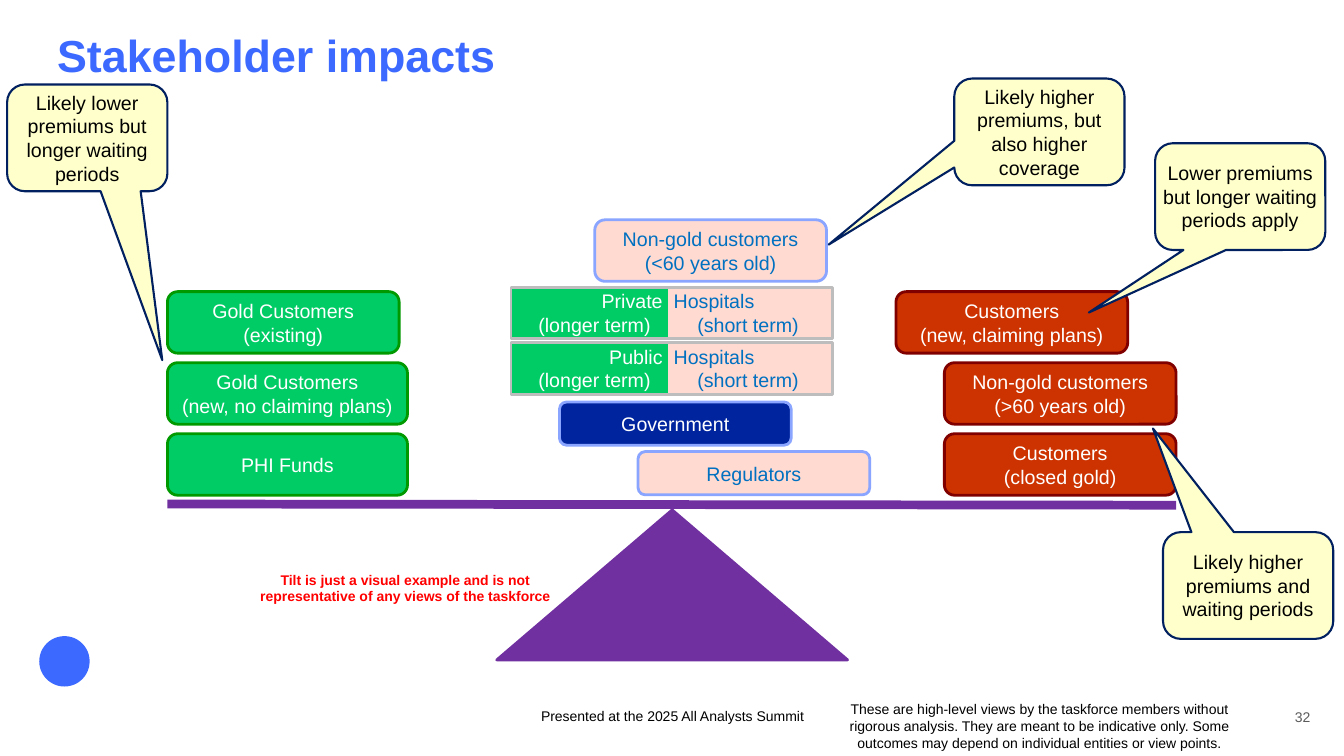
from lxml.etree import SubElement
from pptx import Presentation
from pptx.dml.color import RGBColor
from pptx.enum.shapes import MSO_CONNECTOR, MSO_SHAPE
from pptx.enum.text import MSO_ANCHOR, PP_ALIGN
from pptx.oxml.ns import qn
from pptx.util import Cm, Pt

LEFT, CENTER, RIGHT = PP_ALIGN.LEFT, PP_ALIGN.CENTER, PP_ALIGN.RIGHT
GREEN, RED, PINK, PURPLE = "00CC66", "CC3300", "FFDAD1", "7030A0"
WHITE, BLACK, BLUE, PALE_BLUE = "FFFFFF", "000000", "0070C0", "8AA5FF"
CARD_W, CARD_H, LOW_H = 5.84, 1.55, 1.09
CARD_INSETS = (0.25, 0.13, 0.25, 0.13)


def rgb(value):
    return RGBColor.from_string(value)


def write(sp, text, size=14, color=BLACK, bold=False, aligns=(CENTER,),
          anchor=MSO_ANCHOR.MIDDLE, insets=(0, 0, 0, 0)):
    tf = sp.text_frame
    tf.word_wrap = True
    tf.vertical_anchor = anchor
    tf.margin_left, tf.margin_top, tf.margin_right, tf.margin_bottom = map(Cm, insets)
    for i, line in enumerate(text.split("\n")):
        p = tf.paragraphs[0] if i == 0 else tf.add_paragraph()
        p.alignment = aligns[i % len(aligns)]
        r = p.add_run()
        r.text = line
        r.font.name = "Arial"
        r.font.size = Pt(size)
        r.font.bold = bold
        r.font.color.rgb = rgb(color)


class Board:
    def __init__(self, slide):
        self.slide = slide

    def label(self, box, text, **fmt):
        sp = self.slide.shapes.add_textbox(*map(Cm, box))
        write(sp, text, **fmt)

    def shape(self, kind, box, fill=None, line=None, width=2):
        sp = self.slide.shapes.add_shape(kind, *map(Cm, box))
        sp.shadow.inherit = False
        if fill:
            sp.fill.solid()
            sp.fill.fore_color.rgb = rgb(fill)
        else:
            sp.fill.background()
        if line:
            sp.line.color.rgb = rgb(line)
            sp.line.width = Pt(width)
        else:
            sp.line.fill.background()
        return sp

    def card(self, box, text, fill, line, color=WHITE):
        sp = self.shape(MSO_SHAPE.ROUNDED_RECTANGLE, box, fill, line)
        write(sp, text, color=color, insets=CARD_INSETS)

    def callout(self, box, tail, text):
        sp = self.shape(MSO_SHAPE.ROUNDED_RECTANGULAR_CALLOUT, box, "FFFFCC", "002060", 1.5)
        sp.adjustments[0], sp.adjustments[1] = tail
        write(sp, text, insets=(0.05,) * 4)

    def hospitals(self, top, sector):
        long_term = self.shape(MSO_SHAPE.RECTANGLE, (12.88, top, 3.96, 1.27), GREEN)
        write(long_term, f"{sector} \n(longer term)", color=WHITE,
              aligns=(RIGHT, CENTER), insets=(0.25, 0.13, 0, 0.13))
        short_term = self.shape(MSO_SHAPE.RECTANGLE, (16.84, top, 4.14, 1.27), PINK)
        write(short_term, " Hospitals\n (short term)", color=BLUE,
              aligns=(LEFT, CENTER), insets=(0, 0.13, 0.25, 0.13))
        self.shape(MSO_SHAPE.RECTANGLE, (12.88, top, 8.1, 1.3), line="BDBDBD")

    def beam(self, start, end, color, width):
        c = self.slide.shapes.add_connector(MSO_CONNECTOR.STRAIGHT, *map(Cm, start + end))
        c.line.color.rgb = rgb(color)
        c.line.width = Pt(width)
        SubElement(c.element.spPr, qn("a:effectLst"))


def main():
    prs = Presentation()
    prs.slide_width, prs.slide_height = Cm(33.87), Cm(19.05)
    s = Board(prs.slides.add_slide(prs.slide_layouts[6]))

    s.shape(MSO_SHAPE.OVAL, (0.99, 16.03, 1.27, 1.27), "3C69FF")
    s.label((1.19, 0.58, 32.44, 1.98), "Stakeholder impacts", size=32, color="3C69FF",
            bold=True, aligns=(LEFT,), anchor=MSO_ANCHOR.TOP, insets=CARD_INSETS)
    s.label((31.85, 17.78, 1.17, 0.51), "32", size=10, color="5B5B5B",
            aligns=(RIGHT,), anchor=MSO_ANCHOR.BOTTOM)
    s.label((11.23, 17.78, 11.43, 0.51), "Presented at the 2025 All Analysts Summit", size=10)
    s.label((21.34, 17.81, 9.7, 0.97),
            "These are high-level views by the taskforce members without rigorous analysis. "
            "They are meant to be indicative only. Some outcomes may depend on individual "
            "entities or view points.", size=10)
    s.label((6.45, 14.33, 7.52, 0.97),
            "Tilt is just a visual example and is not representative of any views of the taskforce",
            size=10, color="FF0000", bold=True)

    s.shape(MSO_SHAPE.ISOSCELES_TRIANGLE, (12.52, 12.85, 8.84, 3.78), PURPLE, PURPLE)
    s.beam((4.22, 12.7), (29.64, 12.73), PURPLE, 6.25)

    winners = [
        (CARD_W, "Gold Customers\n(existing)"),
        (6.05, "Gold Customers\n(new, no claiming plans)"),
        (6.05, "PHI Funds"),
    ]
    losers = [
        (22.58, "Customers\n(new, claiming plans)"),
        (23.8, "Non-gold customers\n(>60 years old)"),
        (23.8, "Customers\n(closed gold)"),
    ]
    for i, ((width, gain), (left, loss)) in enumerate(zip(winners, losers)):
        top = 7.35 + 1.79 * i
        s.card((4.22, top, width, CARD_H), gain, GREEN, "009900")
        s.card((left, top, CARD_W, CARD_H), loss, RED, "800000")

    s.card((14.99, 5.54, CARD_W, CARD_H), "Non-gold customers\n(<60 years old)",
           PINK, PALE_BLUE, BLUE)
    for top, sector in ((7.24, "Private"), (8.64, "Public")):
        s.hospitals(top, sector)
    s.card((14.1, 10.13, CARD_W, LOW_H), "Government", "00249E", PALE_BLUE)
    s.card((16.08, 11.38, CARD_W, LOW_H), "Regulators", PINK, PALE_BLUE, BLUE)

    for left, top, width, tail, text in (
        (0.18, 2.13, 4.04, (0.468, 2.082), "Likely lower premiums but longer waiting periods"),
        (24.05, 1.98, 4.29, (-1.238, 1.056), "Likely higher premiums, but also higher coverage"),
        (29.11, 3.61, 4.29, (-0.889, 1.086), "Lower premiums but longer waiting periods apply"),
        (29.31, 13.41, 4.29, (-0.559, -1.471), "Likely higher premiums and waiting periods"),
    ):
        s.callout((left, top, width, 2.69), tail, text)

    prs.save("out.pptx")


if __name__ == "__main__":
    main()
